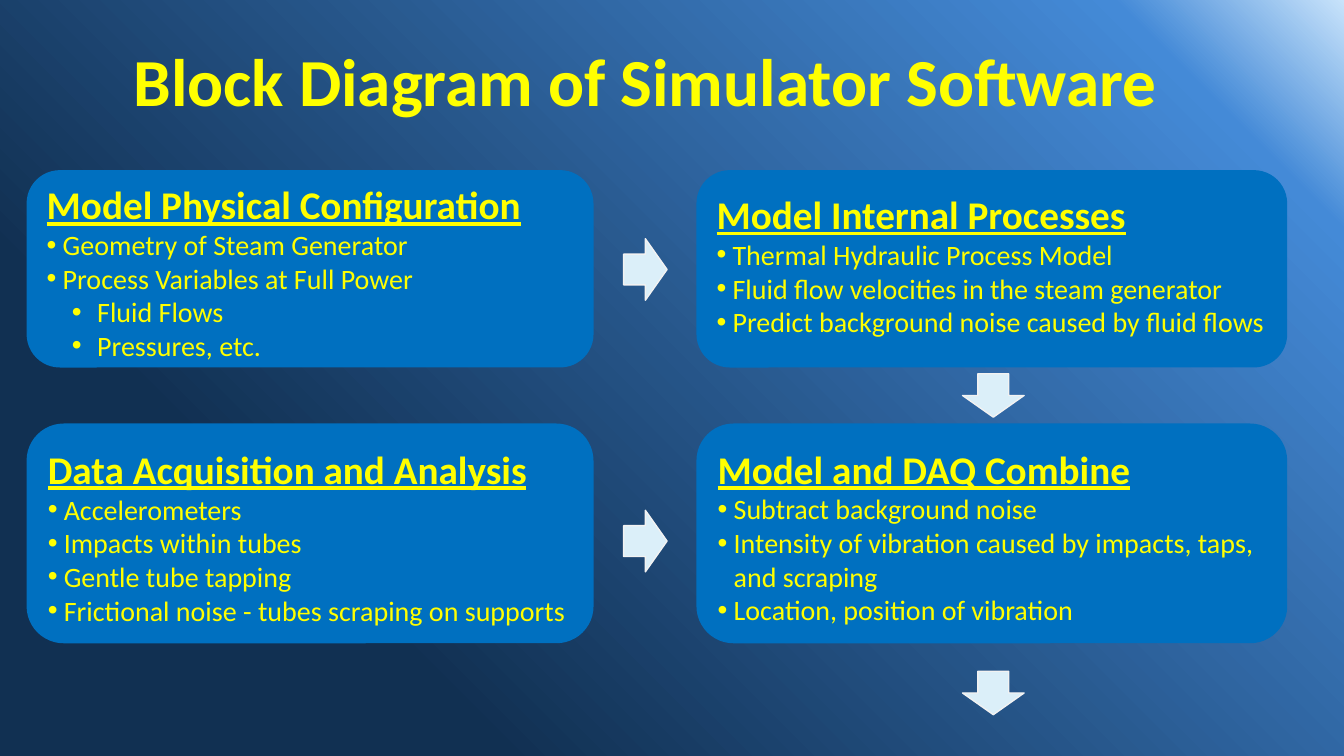
from copy import deepcopy
from dataclasses import dataclass

from lxml.etree import SubElement
from pptx import Presentation
from pptx.dml.color import RGBColor as RGB
from pptx.enum.shapes import MSO_SHAPE as Preset
from pptx.enum.text import MSO_ANCHOR as Anchor, PP_ALIGN as Align
from pptx.oxml.ns import qn
from pptx.util import Pt


@dataclass(frozen=True)
class Theme:
    font: str = "Calibri"
    text: str = "FFFF00"
    block: str = "0070C0"
    arrow: str = "DBEFF9"
    arrow_edge: str = "F2F2F2"
    backdrop: tuple = ((0.24, "113052"), (0.89, "448AD7"), (1.0, "C8E3FB"))
    title_size: int = 48
    heading_size: int = 28
    item_size: int = 20
    indents: tuple = ((11.4, -11.4), (36, -18))


class BlockDiagram:
    def __init__(self, slide, theme):
        self.slide = slide
        self.theme = theme

    def background(self):
        fill = self.slide.background.fill
        fill.gradient()
        fill.gradient_angle = 45
        stop_list = self.slide.background._cSld.find(".//" + qn("a:gsLst"))
        stop_list.append(deepcopy(stop_list[-1]))
        for stop, (position, color) in zip(fill.gradient_stops, self.theme.backdrop):
            stop.position = position
            stop.color.rgb = RGB.from_string(color)

    def style(self, paragraph, size, bold=False, underline=False):
        for run in paragraph.runs:
            font = run.font
            font.name = self.theme.font
            font.size = Pt(size)
            font.bold = bold
            font.underline = underline
            font.color.rgb = RGB.from_string(self.theme.text)

    def title(self, wording, left, top, width, height):
        title = self.slide.shapes.title
        title.left, title.top = Pt(left), Pt(top)
        title.width, title.height = Pt(width), Pt(height)
        frame = title.text_frame
        frame.text = wording
        frame.vertical_anchor = Anchor.MIDDLE
        line = frame.paragraphs[0]
        line.alignment = Align.CENTER
        line.line_spacing = 0.9
        self.style(line, self.theme.title_size, bold=True)

    def shape(self, preset, left, top, width, height, fill, edge):
        shape = self.slide.shapes.add_shape(
            preset, Pt(left), Pt(top), Pt(width), Pt(height))
        shape.shadow.inherit = False
        shape.fill.solid()
        shape.fill.fore_color.rgb = RGB.from_string(fill)
        shape.line.color.rgb = RGB.from_string(edge)
        shape.line.width = Pt(1)
        return shape

    def arrow(self, left, top, rotation):
        arrow = self.shape(Preset.RIGHT_ARROW, left, top, 31, 44,
                           self.theme.arrow, self.theme.arrow_edge)
        arrow.rotation = rotation

    def bullet(self, paragraph, level):
        margin, indent = self.theme.indents[level]
        paragraph.level = level
        properties = paragraph._p.get_or_add_pPr()
        properties.set("marL", str(Pt(margin)))
        properties.set("indent", str(Pt(indent)))
        SubElement(properties, qn("a:buFont")).set("typeface", "Arial")
        SubElement(properties, qn("a:buChar")).set("char", "•")

    def block(self, left, top, width, height, anchor, heading, items):
        block = self.shape(Preset.ROUNDED_RECTANGLE, left, top, width, height,
                           self.theme.block, self.theme.block)
        frame = block.text_frame
        frame.word_wrap = True
        frame.vertical_anchor = anchor
        frame.margin_left = frame.margin_top = frame.margin_right = Pt(7.2)
        frame.margin_bottom = Pt(3.6)
        frame.text = heading
        header = frame.paragraphs[0]
        header.alignment = Align.LEFT
        self.style(header, self.theme.heading_size, bold=True, underline=True)
        for level, wording in items:
            item = frame.add_paragraph()
            item.text = wording
            item.alignment = Align.LEFT
            self.bullet(item, level)
            self.style(item, self.theme.item_size)


LEFT_COLUMN, RIGHT_COLUMN = (19.5, 404), (498, 421)
UPPER_ROW, LOWER_ROW = (122, 140), (303, 156)

BLOCKS = [
    (LEFT_COLUMN, UPPER_ROW, Anchor.MIDDLE, "Model Physical Configuration", [
        (0, "Geometry of Steam Generator"),
        (0, "Process Variables at Full Power"),
        (1, "Fluid Flows"),
        (1, "Pressures, etc."),
    ]),
    (RIGHT_COLUMN, UPPER_ROW, Anchor.TOP, "Model Internal Processes", [
        (0, "Thermal Hydraulic Process Model"),
        (0, "Fluid flow velocities in the steam generator"),
        (0, "Predict background noise caused by fluid flows"),
    ]),
    (LEFT_COLUMN, LOWER_ROW, Anchor.MIDDLE, "Data Acquisition and Analysis", [
        (0, "Accelerometers"),
        (0, "Impacts within tubes"),
        (0, "Gentle tube tapping"),
        (0, "Frictional noise - tubes scraping on supports"),
    ]),
    (RIGHT_COLUMN, LOWER_ROW, Anchor.TOP, "Model and DAQ Combine", [
        (0, "Subtract background noise"),
        (0, "Intensity of vibration caused by impacts, taps, and scraping"),
        (0, "Location, position of vibration"),
    ]),
]

ACROSS, DOWN = 0, 90
ARROWS = [(445.5, 170.5, ACROSS), (694, 260.5, DOWN),
          (445.5, 364.5, ACROSS), (694, 473, DOWN)]


def main():
    deck = Presentation()
    deck.slide_width, deck.slide_height = Pt(960), Pt(540)
    slide = deck.slides.add_slide(deck.slide_layouts[5])
    diagram = BlockDiagram(slide, Theme())
    diagram.background()
    diagram.title("Block Diagram of Simulator Software", 47, 8.5, 828, 104.5)
    for left, top, rotation in ARROWS:
        diagram.arrow(left, top, rotation)
    for (left, width), (top, height), anchor, heading, items in BLOCKS:
        diagram.block(left, top, width, height, anchor, heading, items)
    deck.save("out.pptx")


if __name__ == "__main__":
    main()
